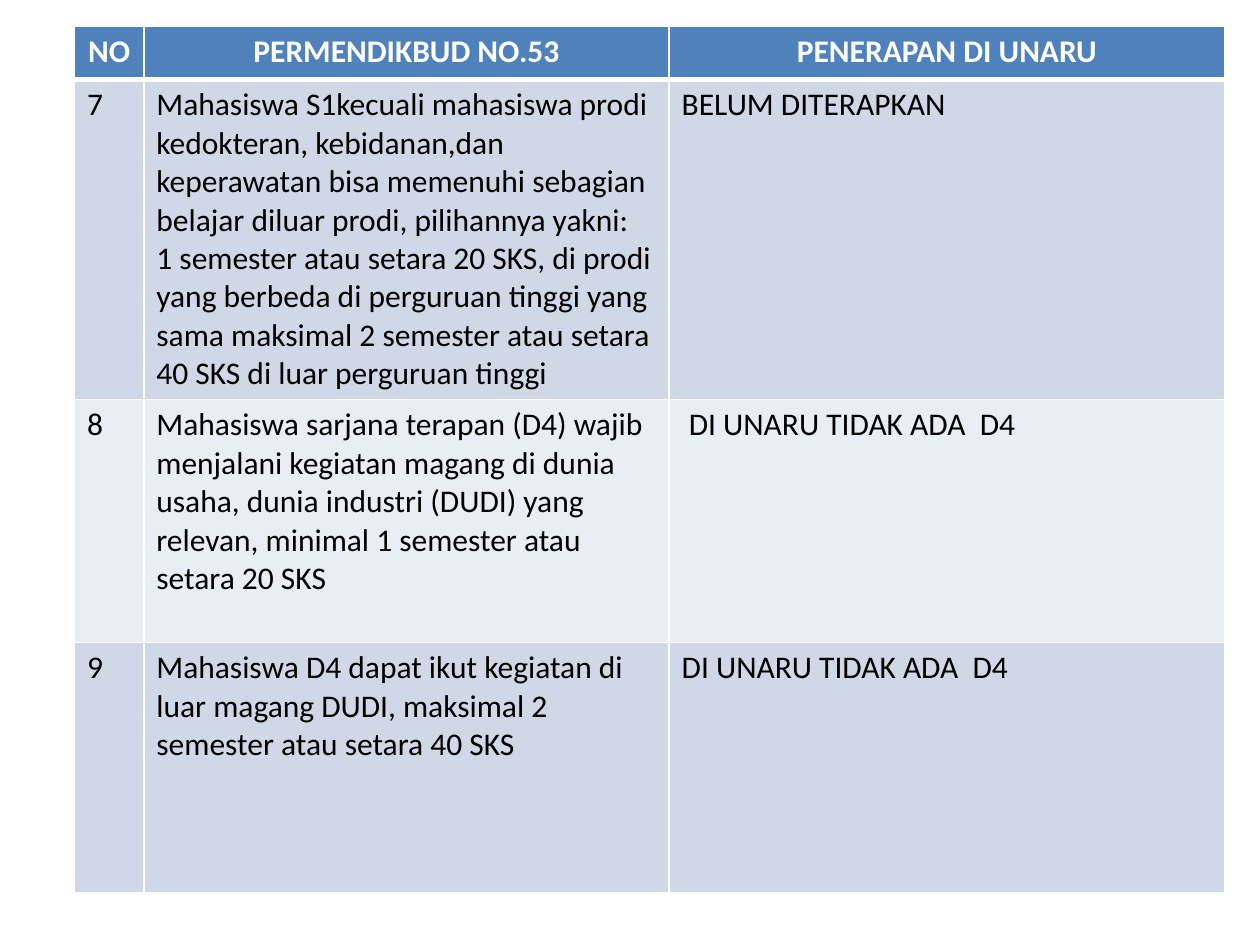
from lxml.etree import SubElement
from pptx import Presentation
from pptx.dml.color import RGBColor as RGB
from pptx.enum.text import PP_ALIGN as Align
from pptx.oxml.ns import qn
from pptx.util import Cm, Pt

WHITE = RGB(0xFF, 0xFF, 0xFF)
BLACK = RGB(0, 0, 0)
BLUE = RGB(0x4F, 0x81, 0xBD)
BANDS = [RGB(0xE9, 0xED, 0xF4), RGB(0xD0, 0xD8, 0xE8)]

COLS = [1.4, 10.59, 11.2]
ROWS = [1.07, 6.45, 4.9, 5.05]
CELLS = [
    ["NO", "PERMENDIKBUD NO.53", "PENERAPAN DI UNARU"],
    ["7",
     "Mahasiswa S1kecuali mahasiswa prodi kedokteran, kebidanan,dan "
     "keperawatan bisa memenuhi sebagian belajar diluar prodi, "
     "pilihannya yakni:\n"
     "1 semester atau setara 20 SKS, di prodi yang berbeda di perguruan "
     "tinggi yang sama maksimal 2 semester atau setara 40 SKS di luar "
     "perguruan tinggi",
     "BELUM DITERAPKAN"],
    ["8",
     "Mahasiswa sarjana terapan (D4) wajib menjalani kegiatan magang di "
     "dunia usaha, dunia industri (DUDI) yang relevan, minimal 1 semester "
     "atau setara 20 SKS",
     " DI UNARU TIDAK ADA  D4"],
    ["9",
     "Mahasiswa D4 dapat ikut kegiatan di luar magang DUDI, maksimal 2 "
     "semester atau setara 40 SKS",
     "DI UNARU TIDAK ADA  D4"],
]


def set_edges(cell, top, base):
    """Draw white cell borders; top and base are widths in points."""
    props = cell._tc.get_or_add_tcPr()
    for side, width in zip("LRTB", (1, 1, top, base)):
        line = SubElement(props, qn(f"a:ln{side}"), w=str(Pt(width)))
        fill = SubElement(line, qn("a:solidFill"))
        SubElement(fill, qn("a:srgbClr"), val=str(WHITE))


def fill_cell(cell, text, row):
    head = row == 0
    set_edges(cell, 3 if row == 1 else 1, 3 if head else 1)
    cell.fill.solid()
    cell.fill.fore_color.rgb = BLUE if head else BANDS[row % 2]
    cell.text_frame.text = text
    for para in cell.text_frame.paragraphs:
        para.alignment = Align.CENTER if head else Align.LEFT
        for run in para.runs:
            font = run.font
            font.name, font.size, font.bold = "Calibri", Pt(18), head
            font.color.rgb = WHITE if head else BLACK


def add_rules(slide, left, top):
    """Place the table of rules with its corner at left, top (cm)."""
    table = slide.shapes.add_table(
        len(ROWS), len(COLS), Cm(left), Cm(top),
        Cm(sum(COLS)), Cm(sum(ROWS))).table
    for col, width in zip(table.columns, COLS):
        col.width = Cm(width)
    for row, height in zip(table.rows, ROWS):
        row.height = Cm(height)
    for i, texts in enumerate(CELLS):
        for j, text in enumerate(texts):
            fill_cell(table.cell(i, j), text, i)
    table.cell(1, 2).text_frame.paragraphs[0].alignment = Align.JUSTIFY


def main():
    deck = Presentation()
    deck.slide_width, deck.slide_height = Cm(25.4), Cm(19.05)
    slide = deck.slides.add_slide(deck.slide_layouts[6])
    add_rules(slide, 1.5, 0.53)
    deck.save("out.pptx")


if __name__ == "__main__":
    main()
